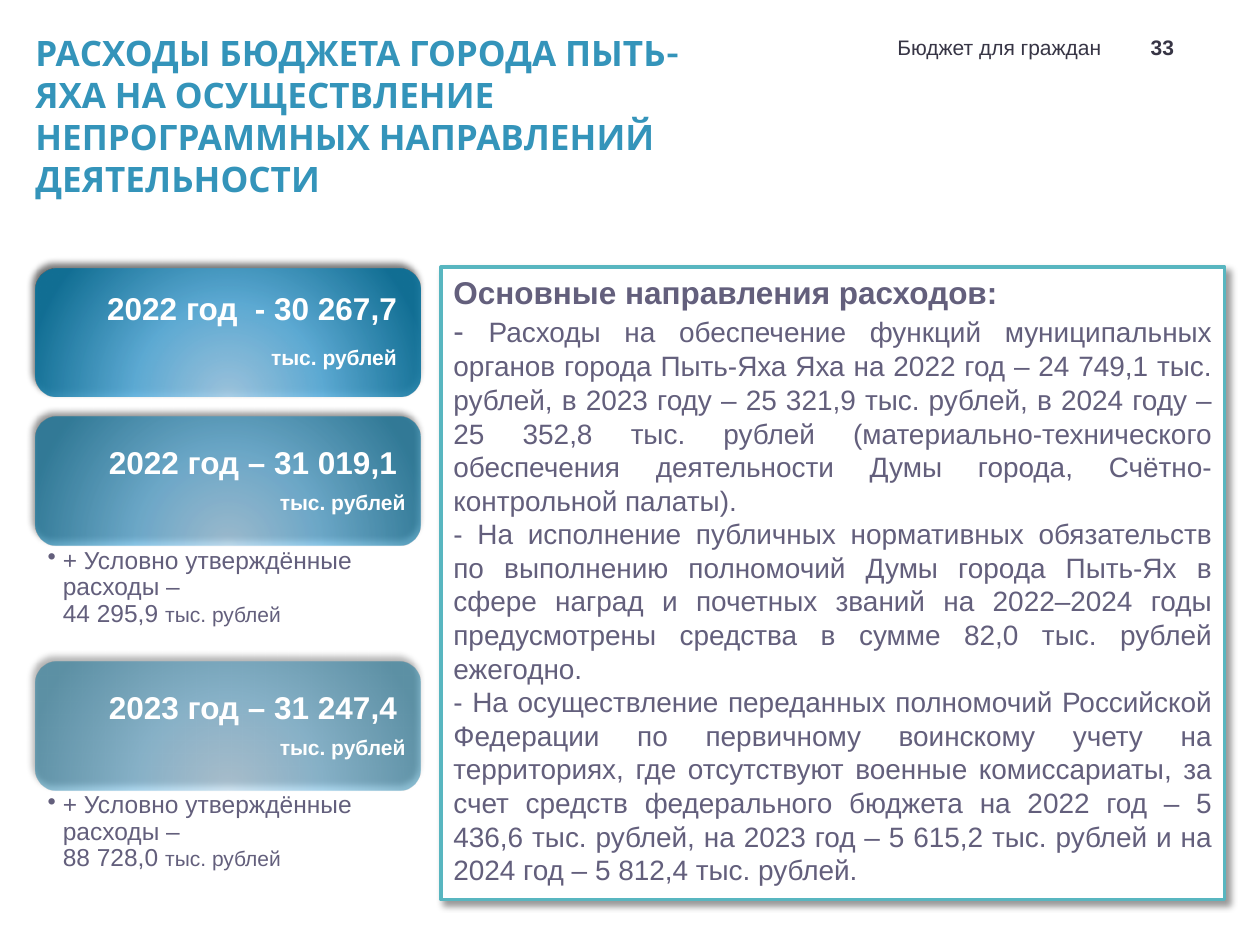
import pptx
import pptx.dml.color
import pptx.enum.shapes
import pptx.enum.text
import pptx.oxml
import pptx.oxml.ns
import pptx.util
from pptx.util import Inches

RGBColor = pptx.dml.color.RGBColor
ALIGN = pptx.enum.text.PP_ALIGN
ANCHOR = pptx.enum.text.MSO_ANCHOR
SHAPE = pptx.enum.shapes.MSO_SHAPE

WHITE = RGBColor(0xFF, 0xFF, 0xFF)
BLACK = RGBColor(0, 0, 0)
DARK = RGBColor(0x37, 0x35, 0x45)
BLUE = RGBColor(0x34, 0x94, 0xBA)
TEAL = RGBColor(0x58, 0xB6, 0xC0)
GREY = RGBColor(0x63, 0x5F, 0x7C)
CARD_STOPS = [(0, RGBColor(0xA1, 0xCB, 0xE6)),
              (46, RGBColor(0x5B, 0xB0, 0xDE)),
              (100, RGBColor(0x08, 0x6F, 0x98))]

UNIT = "тыс. рублей"
CARD_X, CARD_W, CARD_H = 0.28, 3.06, 1.02
CARDS = [  # top, opacity, amount, unit pieces, conditional amount
    (2.13, 90, "2022 год  - 30 267,7 ", [(UNIT, 12), (" ", 18)], None),
    (3.31, 70, "2022 год – 31 019,1 ", [(UNIT, 12)], "44 295,9 "),
    (5.25, 50, "2023 год – 31 247,4 ", [(UNIT, 12)], "88 728,0 "),
]
DIRECTIONS = [
    [("- ", 18), (
        "Расходы на обеспечение функций муниципальных органов города Пыть-Яха Яха "
        "на 2022 год – 24 749,1 тыс. рублей, в 2023 году – 25 321,9 тыс. рублей, "
        "в 2024 году – 25 352,8 тыс. рублей (материально-технического обеспечения "
        "деятельности Думы города, Счётно- контрольной палаты). ", 16)],
    [("- На исполнение публичных нормативных обязательств по выполнению полномочий "
      "Думы города Пыть-Ях в сфере наград и почетных званий на 2022–2024 годы "
      "предусмотрены средства в сумме 82,0 тыс. рублей ежегодно.", 16)],
    [("- На осуществление переданных полномочий Российской Федерации по первичному "
      "воинскому учету на территориях, где отсутствуют военные комиссариаты, за счет "
      "средств федерального бюджета на 2022 год – 5 436,6 тыс. рублей, на 2023 год – "
      "5 615,2 тыс. рублей и на 2024 год – 5 812,4 тыс. рублей.", 16)],
]


def element(xml):
    """Parse a DrawingML fragment, declaring the a: namespace on its root."""
    tag, rest = xml.split(" ", 1)
    return pptx.oxml.parse_xml(f"{tag} {pptx.oxml.ns.nsdecls('a')} {rest}")


class Deck:
    def __init__(self, font="Arial"):
        self.font = font
        self.prs = pptx.Presentation()
        self.prs.slide_width, self.prs.slide_height = Inches(10), Inches(7.5)
        self.s = self.prs.slides.add_slide(self.prs.slide_layouts[6])

    def frame(self, sp, anchor=ANCHOR.TOP, insets=(0.1, 0.05, 0.1, 0.05)):
        tf = sp.text_frame
        tf.word_wrap = True
        tf.vertical_anchor = anchor
        (tf.margin_left, tf.margin_top,
         tf.margin_right, tf.margin_bottom) = map(Inches, insets)
        return tf

    def text(self, x, y, w, h, **layout):
        sp = self.s.shapes.add_textbox(Inches(x), Inches(y), Inches(w), Inches(h))
        return self.frame(sp, **layout)

    def shape(self, kind, x, y, w, h):
        sp = self.s.shapes.add_shape(kind, Inches(x), Inches(y), Inches(w), Inches(h))
        sp.shadow.inherit = False
        return sp

    def shadow(self, sp, opacity, angle):
        effects = sp._element.spPr.find(pptx.oxml.ns.qn("a:effectLst"))
        effects.append(element(
            f'<a:outerShdw blurRad="{pptx.util.Pt(4)}" dist="{pptx.util.Pt(3)}" '
            f'dir="{angle * 60000}" algn="tl" rotWithShape="0"><a:srgbClr val="{BLACK}">'
            f'<a:alpha val="{opacity * 1000}"/></a:srgbClr></a:outerShdw>'))

    def card(self, x, y, w, h, opacity):
        sp = self.shape(SHAPE.ROUNDED_RECTANGLE, x, y, w, h)
        sp.line.fill.background()
        stops = "".join(
            f'<a:gs pos="{pos * 1000}"><a:srgbClr val="{color}">'
            f'<a:alpha val="{opacity * 1000}"/></a:srgbClr></a:gs>'
            for pos, color in CARD_STOPS)
        sp._element.spPr.insert(2, element(
            f'<a:gradFill rotWithShape="1"><a:gsLst>{stops}</a:gsLst><a:path path="circle">'
            '<a:fillToRect l="110000" t="250000" r="110000" b="40000"/></a:path></a:gradFill>'))
        self.shadow(sp, 60, 245)

    def paragraph(self, tf, pieces, color, bold=False, align=ALIGN.LEFT,
                  spacing=None, after=None, bullet=False, font=None):
        """Fill the empty first paragraph or add one; pieces are (text, size)."""
        p = tf.paragraphs[0] if not tf.text else tf.add_paragraph()
        p.alignment = align
        if spacing:
            p.line_spacing = spacing
        if after:
            p.space_after = pptx.util.Pt(after)
        if bullet:
            pPr = p._p.get_or_add_pPr()
            pPr.set("marL", str(Inches(0.12)))
            pPr.set("indent", str(Inches(-0.12)))
            pPr.append(element('<a:buChar char="•"/>'))
        for i, (text, size) in enumerate(pieces):
            if i == 0:
                p.text = text
                for br in p._p.findall(pptx.oxml.ns.qn("a:br")):
                    br.append(element(f'<a:rPr sz="{size * 100}"/>'))
                runs = p.runs
            else:
                runs = [p.add_run()]
                runs[0].text = text
            for r in runs:
                r.font.name = font or self.font
                r.font.size = pptx.util.Pt(size)
                r.font.bold = bold
                r.font.color.rgb = color


def main():
    deck = Deck()

    tf = deck.text(8.95, 0.19, 0.55, 0.33, anchor=ANCHOR.BOTTOM)
    deck.paragraph(tf, [("33", 12)], DARK, bold=True, align=ALIGN.CENTER)
    tf = deck.text(0.28, 0.2, 5.51, 0.79, insets=(0, 0.05, 0, 0.05))
    deck.paragraph(tf, [("РАСХОДЫ БЮДЖЕТА ГОРОДА ПЫТЬ-ЯХА НА ОСУЩЕСТВЛЕНИЕ "
                         "НЕПРОГРАММНЫХ НАПРАВЛЕНИЙ ДЕЯТЕЛЬНОСТИ", 20)],
                   BLUE, bold=True, font="Karla")
    tf = deck.text(6.42, 0.19, 2.42, 0.33, anchor=ANCHOR.BOTTOM)
    deck.paragraph(tf, [("Бюджет для граждан", 12)], DARK, align=ALIGN.RIGHT)

    panel = deck.shape(SHAPE.RECTANGLE, 3.5, 2.12, 6.22, 5.02)
    panel.fill.solid()
    panel.fill.fore_color.rgb = WHITE
    panel.line.color.rgb = TEAL
    panel.line.width = pptx.util.Pt(2)
    deck.shadow(panel, 40, 45)
    tf = deck.frame(panel)
    tf.auto_size = pptx.enum.text.MSO_AUTO_SIZE.SHAPE_TO_FIT_TEXT
    deck.paragraph(tf, [("Основные направления расходов:", 18)], GREY,
                   bold=True, align=ALIGN.JUSTIFY)
    for pieces in DIRECTIONS:
        deck.paragraph(tf, pieces, GREY, align=ALIGN.JUSTIFY)

    for top, opacity, amount, unit, conditional in CARDS:
        deck.card(CARD_X, top, CARD_W, CARD_H, opacity)
        tf = deck.text(CARD_X + 0.05, top + 0.05, CARD_W - 0.1, CARD_H - 0.1,
                       anchor=ANCHOR.MIDDLE, insets=(0.07,) * 4)
        for pieces in ([(amount, 18)], unit):
            deck.paragraph(tf, pieces, WHITE, bold=True, align=ALIGN.RIGHT,
                           spacing=0.9, after=6.3)
        if conditional:
            tf = deck.text(CARD_X, top + CARD_H, CARD_W, 0.91,
                           insets=(0.1, 0.02, 0.11, 0.02))
            deck.paragraph(tf, [(f"+ Условно утверждённые расходы – \v{conditional}", 14),
                                (UNIT, 12)],
                           GREY, spacing=0.9, after=2.8, bullet=True)

    deck.prs.save("out.pptx")


if __name__ == "__main__":
    main()
